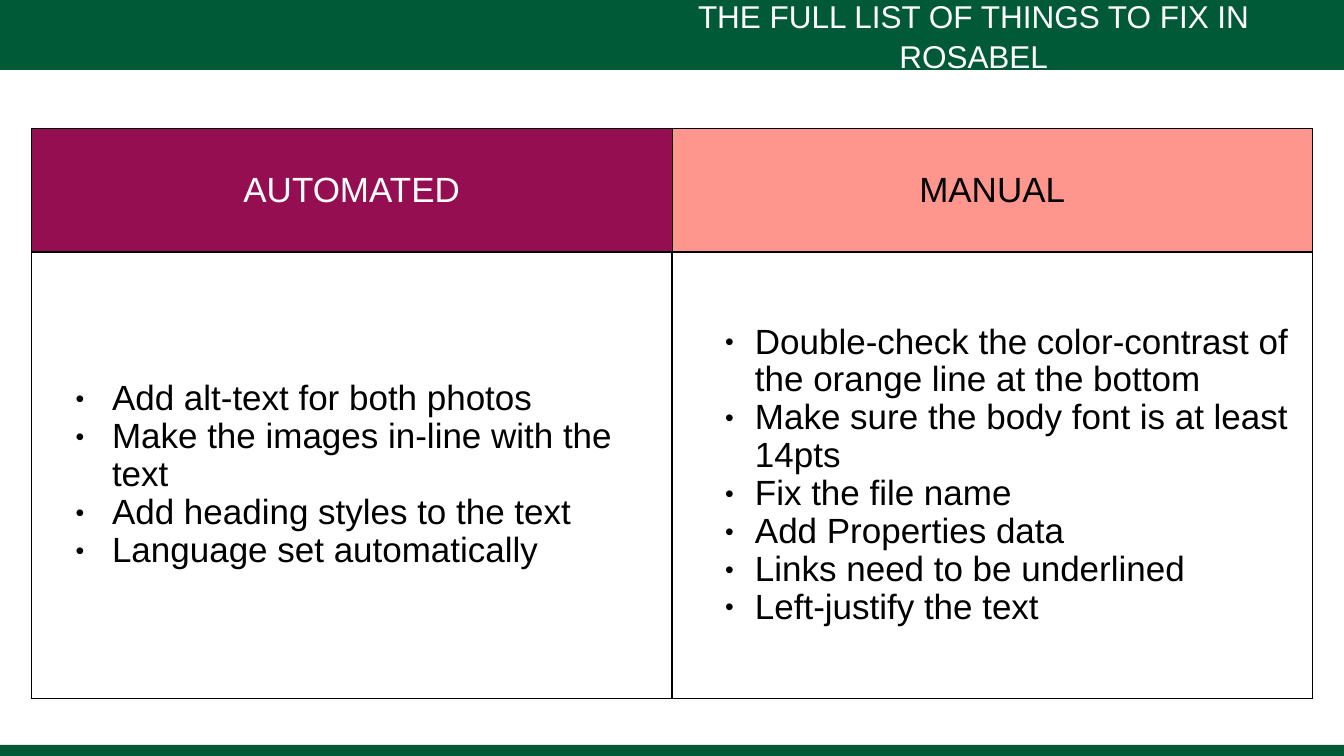
from lxml import etree
from pptx import Presentation
from pptx.dml.color import RGBColor
from pptx.enum.shapes import MSO_SHAPE
from pptx.enum.text import MSO_ANCHOR, MSO_AUTO_SIZE, PP_ALIGN
from pptx.oxml.ns import qn
from pptx.util import Pt

RECTANGLE = MSO_SHAPE.RECTANGLE
MIDDLE = MSO_ANCHOR.MIDDLE
NO_AUTOFIT = MSO_AUTO_SIZE.NONE
CENTER = PP_ALIGN.CENTER
LEFT = PP_ALIGN.LEFT

FONT = "Arial"
INSET = Pt(4)
COLORS = {
    "green": "005A38",
    "plum": "960E52",
    "coral": "FF968D",
    "white": "FFFFFF",
    "black": "000000",
}
COLUMNS = [
    {
        "heading": "AUTOMATED",
        "fill": "plum",
        "text": "white",
        "level": 0,
        "margin": 111,
        "hanging": 52,
        "borders": {"L": 1, "R": 3, "T": 1, "B": 1},
        "fixes": [
            "Add alt-text for both photos",
            "Make the images in-line with the text",
            "Add heading styles to the text",
            "Language set automatically",
        ],
    },
    {
        "heading": "MANUAL",
        "fill": "coral",
        "text": "black",
        "level": 2,
        "margin": 114.5,
        "hanging": 42.5,
        "borders": {"L": 1, "R": 1, "T": 1, "B": 1},
        "fixes": [
            "Double-check the color-contrast of the orange line at the bottom",
            "Make sure the body font is at least 14pts",
            "Fix the file name",
            "Add Properties data",
            "Links need to be underlined",
            "Left-justify the text",
        ],
    },
]
HEADING_BORDERS = {"L": 1, "R": 1, "T": 1, "B": 3}


def color(name):
    return RGBColor.from_string(COLORS[name])


def format_paragraph(paragraph, size, color_name, alignment):
    paragraph.alignment = alignment
    font = paragraph.font
    for target in [font] + [run.font for run in paragraph.runs]:
        target.name = FONT
        target.size = Pt(size)
        target.bold = False
        target.color.rgb = color(color_name)


def add_bar(slide, left, top):
    shape = slide.shapes.add_shape(RECTANGLE, Pt(left), Pt(top), Pt(2151), Pt(100))
    shape.shadow.inherit = False
    shape.fill.solid()
    shape.fill.fore_color.rgb = color("green")
    shape.line.fill.background()


def add_title(slide, text):
    title = slide.shapes.title
    title.left, title.top, title.width, title.height = Pt(904), Pt(19), Pt(974), Pt(62)
    text_frame = title.text_frame
    text_frame.text = text
    text_frame.word_wrap = True
    text_frame.auto_size = NO_AUTOFIT
    text_frame.vertical_anchor = MIDDLE
    text_frame.margin_left = text_frame.margin_right = INSET
    text_frame.margin_top = text_frame.margin_bottom = INSET
    paragraph = text_frame.paragraphs[0]
    paragraph.line_spacing = 1.05
    format_paragraph(paragraph, 45, "white", CENTER)
    title._element.getparent().append(title._element)


def set_borders(cell, widths):
    properties = cell._tc.get_or_add_tcPr()
    for side, width in widths.items():
        line = etree.SubElement(properties, qn(f"a:ln{side}"), w=str(Pt(width)))
        fill = etree.SubElement(line, qn("a:solidFill"))
        etree.SubElement(fill, qn("a:srgbClr"), val=COLORS["black"])


def format_cell(cell, fill_name, borders):
    set_borders(cell, borders)
    cell.fill.solid()
    cell.fill.fore_color.rgb = color(fill_name)
    cell.vertical_anchor = MIDDLE
    cell.margin_left = cell.margin_right = INSET
    cell.margin_top = cell.margin_bottom = INSET


def add_bullet(paragraph, margin, hanging):
    properties = paragraph._p.get_or_add_pPr()
    properties.set("marL", str(Pt(margin)))
    properties.set("indent", str(-Pt(hanging)))
    etree.SubElement(properties, qn("a:buSzPct"), val="71000")
    etree.SubElement(properties, qn("a:buFont"), typeface=FONT)
    etree.SubElement(properties, qn("a:buChar"), char="•")


def fill_heading(cell, column):
    format_cell(cell, column["fill"], HEADING_BORDERS)
    cell.text_frame.text = column["heading"]
    format_paragraph(cell.text_frame.paragraphs[0], 50, column["text"], CENTER)


def fill_list(cell, column):
    format_cell(cell, "white", column["borders"])
    cell.text_frame.text = "\n".join(column["fixes"])
    for paragraph in cell.text_frame.paragraphs:
        add_bullet(paragraph, column["margin"], column["hanging"])
        paragraph.level = column["level"]
        paragraph.line_spacing = 0.97
        format_paragraph(paragraph, 50, "black", LEFT)


def add_fix_table(slide):
    frame = slide.shapes.add_table(2, 2, Pt(45), Pt(183.5), Pt(1830), Pt(814))
    table = frame.table
    table.horz_banding = False
    table.rows[0].height = Pt(177)
    table.rows[1].height = Pt(637)
    for index, column in enumerate(COLUMNS):
        table.columns[index].width = Pt(915)
        fill_heading(table.cell(0, index), column)
        fill_list(table.cell(1, index), column)


def main():
    presentation = Presentation()
    presentation.slide_width = Pt(1920)
    presentation.slide_height = Pt(1080)
    slide = presentation.slides.add_slide(presentation.slide_layouts[5])
    slide.background.fill.solid()
    slide.background.fill.fore_color.rgb = color("white")
    add_bar(slide, -40, 0)
    add_bar(slide, -54, 1064)
    add_title(slide, "THE FULL LIST OF THINGS TO FIX IN ROSABEL")
    add_fix_table(slide)
    presentation.save("out.pptx")


if __name__ == "__main__":
    main()
